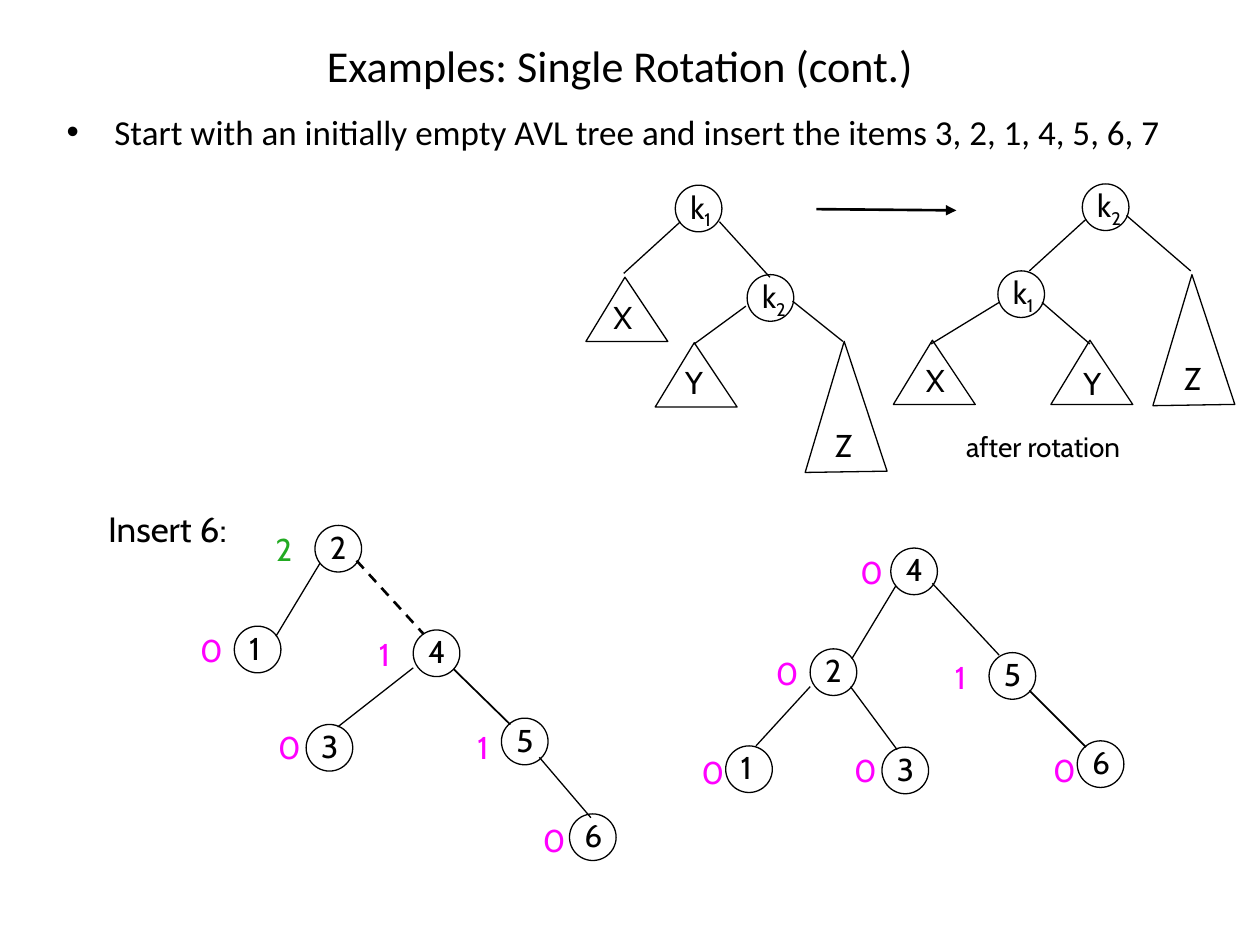
from lxml import etree
from pptx import Presentation
from pptx.dml.color import RGBColor
from pptx.enum.dml import MSO_LINE
from pptx.enum.shapes import MSO_CONNECTOR, MSO_SHAPE
from pptx.enum.text import MSO_ANCHOR, MSO_AUTO_SIZE, PP_ALIGN
from pptx.oxml.ns import qn
from pptx.util import Inches, Pt

STRAIGHT = MSO_CONNECTOR.STRAIGHT
OVAL = MSO_SHAPE.OVAL
DASH = MSO_LINE.DASH
MIDDLE = MSO_ANCHOR.MIDDLE
GROW = MSO_AUTO_SIZE.SHAPE_TO_FIT_TEXT
CENTER = PP_ALIGN.CENTER

BLACK = "000000"
PINK = "FF00FF"
GREEN = "22AA22"
DIAM = 0.37


def color(code):
    """Turn a hex string into a colour."""
    return RGBColor.from_string(code)


def add_run(para, words, size, font="Cabin", ink=BLACK, base=None):
    """Append one styled run to a paragraph."""
    run = para.add_run()
    run.text = words
    run.font.size = Pt(size)
    run.font.name = font
    run.font.color.rgb = color(ink)
    if base:
        run._r.get_or_add_rPr().set("baseline", str(base))


def add_label(shapes, x, y, words, w=0.34, h=0.4, size=18, ink=BLACK, sub=None):
    """Place a one-line label with an optional subscript."""
    box = shapes.add_textbox(Inches(x), Inches(y), Inches(w), Inches(h))
    frame = box.text_frame
    frame.word_wrap = False
    frame.auto_size = GROW
    add_run(frame.paragraphs[0], words, size, ink=ink)
    if sub:
        add_run(frame.paragraphs[0], sub, size, ink=ink, base=-25000)


def add_edge(shapes, x, y, ends, width=0.75, dash=None, arrow=False):
    """Draw a line between two points of the box at x, y."""
    x1, y1, x2, y2 = ends
    edge = shapes.add_connector(
        STRAIGHT, Inches(x + x1), Inches(y + y1), Inches(x + x2), Inches(y + y2))
    edge.line.color.rgb = color(BLACK)
    edge.line.width = Pt(width)
    if dash:
        edge.line.dash_style = dash
    if arrow:
        etree.SubElement(edge.line._get_or_add_ln(), qn("a:tailEnd"), type="triangle")
    etree.SubElement(edge._element.spPr, qn("a:effectLst"))


def outline(shape):
    """Give a shape a thin black outline and no fill."""
    shape.shadow.inherit = False
    shape.fill.background()
    shape.line.color.rgb = color(BLACK)
    shape.line.width = Pt(0.75)


def add_node(shapes, x, y, key, sub=None):
    """Group a circle with its key."""
    group = shapes.add_group_shape().shapes
    outline(group.add_shape(OVAL, Inches(x), Inches(y), Inches(DIAM), Inches(DIAM)))
    add_label(group, x + 0.02, y - 0.03, key, w=0.42 if sub else 0.34, sub=sub)


def add_wedge(shapes, x, y, drop, tilt=0):
    """Draw a subtree triangle whose box starts at x, y."""
    pen = shapes.build_freeform(Inches(x + 0.31), Inches(y))
    pen.add_line_segments(
        [(Inches(x), Inches(y + drop)), (Inches(x + 0.65), Inches(y + drop - tilt))],
        close=True)
    outline(pen.convert_to_shape())


def add_tree(shapes, x, y, nodes, edges):
    """Draw a numbered tree with the height beside each node."""
    for edge in edges:
        add_edge(shapes, x, y, *edge)
    for key, nx, ny, mark, mx, my, ink in nodes:
        add_node(shapes, x + nx, y + ny, key)
        add_label(shapes, x + mx, y + my, mark, ink=ink)


def add_scheme(shapes, x, y, nodes, wedges, edges):
    """Draw a general tree with subtrees as triangles."""
    group = shapes.add_group_shape().shapes
    for edge in edges:
        add_edge(group, x, y, edge)
    for sub, nx, ny in nodes:
        add_node(group, x + nx, y + ny, "k", sub)
    for name, wx, wy, tx, ty in wedges:
        drop, tilt = (1.04, 0.01) if name == "Z" else (0.51, 0)
        add_wedge(group, x + wx, y + wy, drop, tilt)
        add_label(group, x + tx, y + ty, name)


def add_head(shapes, x, y, w):
    """Write the title and the bullet below it."""
    title = shapes.add_textbox(Inches(x + 0.24), Inches(y), Inches(8.5), Inches(0.37))
    title.text_frame.word_wrap = True
    title.text_frame.vertical_anchor = MIDDLE
    para = title.text_frame.paragraphs[0]
    para.alignment = CENTER
    add_run(para, "Examples: Single Rotation (cont.)", 25.2, "Calibri")

    body = shapes.add_textbox(Inches(x), Inches(y + 0.5), Inches(w), Inches(0.79))
    body.text_frame.word_wrap = True
    para = body.text_frame.paragraphs[0]
    para.space_before = Pt(4)
    props = para._p.get_or_add_pPr()
    props.set("marL", str(Inches(0.38)))
    props.set("indent", str(Inches(-0.38)))
    etree.SubElement(props, qn("a:buFont"), typeface="Arial")
    etree.SubElement(props, qn("a:buChar"), char="•")
    add_run(para, "Start with an initially empty AVL tree and insert "
            "the items 3, 2, 1, 4, 5, 6, 7", 20, "Calibri")


def add_turn(shapes, x, y):
    """Show the general tree before and after the rotation."""
    add_scheme(
        shapes, x, y,
        [("1", 0.71, 0.04), ("2", 1.28, 0.75)],
        [("X", 0, 0.77, 0.12, 0.89), ("Y", 0.55, 1.29, 0.69, 1.4),
         ("Z", 1.74, 1.28, 1.88, 1.9)],
        [(0.75, 0.33, 0.3, 0.74), (1.06, 0.33, 1.46, 0.77),
         (1.27, 1, 0.86, 1.3), (1.64, 0.96, 2.04, 1.28)])
    add_edge(shapes, x, y, (1.83, 0.23, 2.94, 0.24), 1.5, arrow=True)
    add_scheme(
        shapes, x + 2.44, y,
        [("2", 1.5, 0.03), ("1", 0.83, 0.72)],
        [("X", 0, 1.27, 0.16, 1.39), ("Y", 1.25, 1.27, 1.41, 1.41),
         ("Z", 2.06, 0.75, 2.21, 1.37)],
        [(1.53, 0.31, 1.08, 0.72), (1.85, 0.28, 2.36, 0.72),
         (0.84, 0.97, 0.3, 1.3), (1.18, 0.97, 1.56, 1.3)])
    add_label(shapes, x + 2.92, y + 1.93, "after rotation", 1.49, 0.37, 16)


def add_case(shapes, x, y):
    """Show the insertion of 6 and the balanced result."""
    add_label(shapes, x, y, "Insert 6:", 1.26, 0.43, 20)
    add_tree(
        shapes, x + 0.73, y + 0.16,
        [("2", 1.01, 0.03, "2", 0.6, 0.02, GREEN),
         ("1", 0.37, 0.83, "0", 0, 0.82, PINK),
         ("4", 1.79, 0.86, "1", 1.42, 0.85, PINK),
         ("3", 0.94, 1.61, "0", 0.62, 1.59, PINK),
         ("5", 2.49, 1.56, "1", 2.2, 1.59, PINK),
         ("6", 3.03, 2.32, "0", 2.72, 2.33, PINK)],
        [((1.05, 0.33, 0.7, 0.91),), ((1.34, 0.31, 1.87, 0.89), 1.5, DASH),
         ((1.79, 1.16, 1.19, 1.63),), ((2.11, 1.17, 2.56, 1.61), 1),
         ((2.79, 1.87, 3.2, 2.35),)])
    add_tree(
        shapes, x + 4.71, y + 0.33,
        [("4", 1.6, 0.04, "0", 1.26, 0.03, PINK),
         ("2", 0.96, 0.84, "0", 0.59, 0.83, PINK),
         ("5", 2.38, 0.87, "1", 2.01, 0.86, PINK),
         ("1", 0.29, 1.61, "0", 0, 1.62, PINK),
         ("3", 1.53, 1.62, "0", 1.21, 1.6, PINK),
         ("6", 3.08, 1.57, "0", 2.79, 1.6, PINK)],
        [((1.64, 0.34, 1.29, 0.92),), ((1.93, 0.32, 2.46, 0.89),),
         ((0.96, 1.14, 0.53, 1.61),), ((1.28, 1.14, 1.65, 1.64),),
         ((2.7, 1.17, 3.15, 1.62), 1)])


def main():
    """Build and save the slide."""
    deck = Presentation()
    deck.slide_width, deck.slide_height = Inches(10), Inches(7.5)
    shapes = deck.slides.add_slide(deck.slide_layouts[6]).shapes
    add_head(shapes, 0.43, 0.33, 9.16)
    add_turn(shapes, 4.65, 1.43)
    add_case(shapes, 0.76, 3.98)
    deck.save("out.pptx")


if __name__ == "__main__":
    main()
